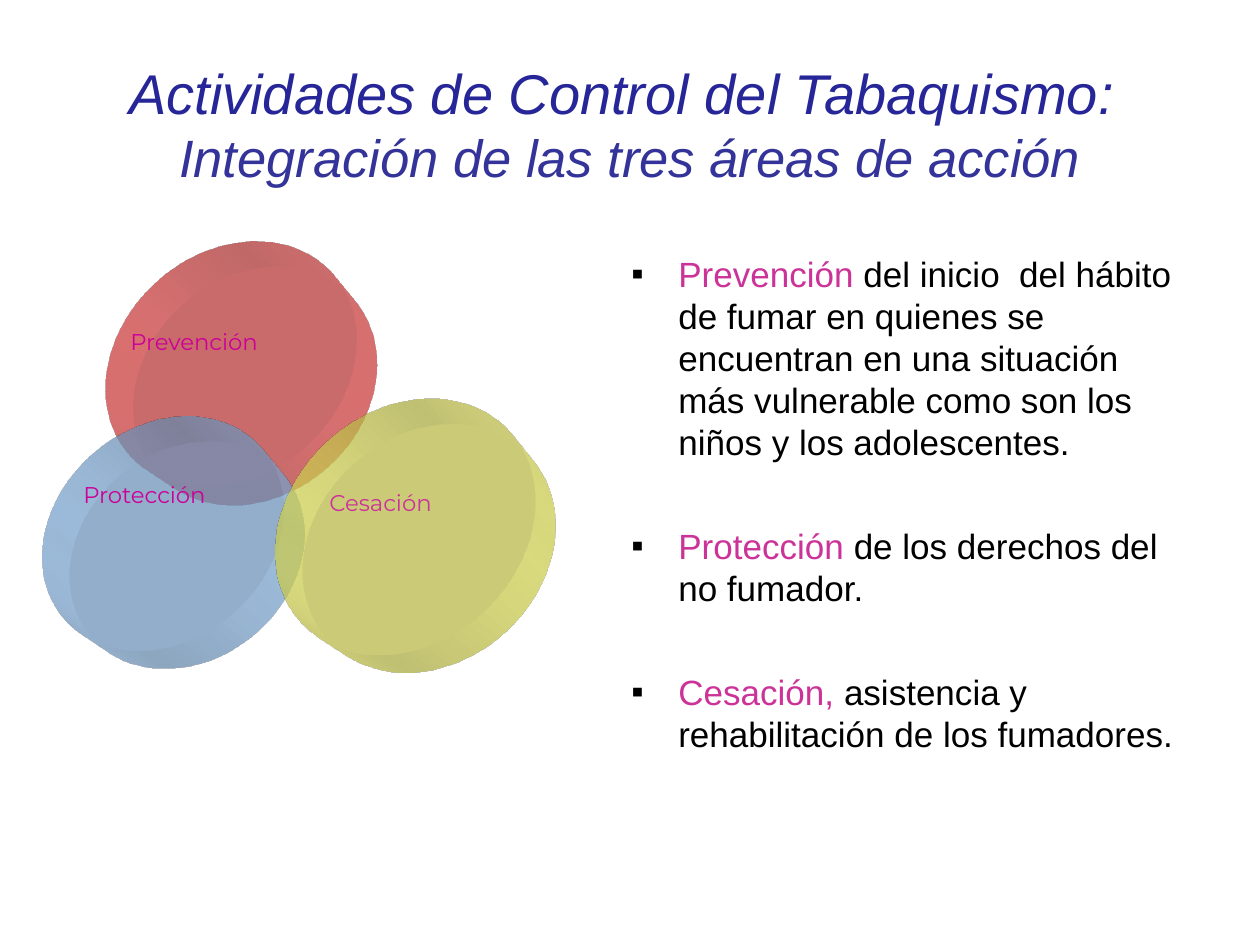
from lxml import etree
from pptx import Presentation
from pptx.dml.color import RGBColor
from pptx.enum.shapes import MSO_SHAPE
from pptx.enum.text import MSO_ANCHOR, PP_ALIGN
from pptx.oxml.ns import qn
from pptx.util import Pt

OVAL = MSO_SHAPE.OVAL
CENTER, LEFT = PP_ALIGN.CENTER, PP_ALIGN.LEFT
TOP, MIDDLE = MSO_ANCHOR.TOP, MSO_ANCHOR.MIDDLE
PX = 9144000 // 1260
DEPTH = 430200

COLORS = {
    "title": "262699", "subtitle": "333399", "text": "000000",
    "accent": "CC3399", "label": "CC0099",
    "red": "FF5050", "blue": "99CCFF", "yellow": "FFFF66",
}

deck = Presentation()
deck.slide_width, deck.slide_height = 1260 * PX, 945 * PX
page = deck.slides.add_slide(deck.slide_layouts[6])


def add_text(shapes, bounds, paragraphs, align=LEFT, anchor=TOP):
    """Add a wrapping text box; each paragraph lists (text, size, font, color, italic)."""
    box = shapes.add_textbox(*(value * PX for value in bounds))
    frame = box.text_frame
    frame.word_wrap, frame.vertical_anchor = True, anchor
    for index, spans in enumerate(paragraphs):
        para = frame.add_paragraph() if index else frame.paragraphs[0]
        para.alignment = align
        for text, size, font, color, italic in spans:
            span = para.add_run()
            span.text = text
            formats = {"size": Pt(size), "name": font, "italic": italic}
            for name, value in formats.items():
                setattr(span.font, name, value)
            span.font.color.rgb = RGBColor.from_string(COLORS[color])
    return frame


def extrude(shape, color):
    """Turn a flat shape into a tilted solid seen in perspective."""
    properties = shape._element.spPr
    scene = etree.SubElement(properties, qn("a:scene3d"))
    camera = etree.SubElement(scene, qn("a:camera"), prst="legacyPerspectiveFront")
    etree.SubElement(camera, qn("a:rot"), lat="20099999", lon="1500000", rev="0")
    etree.SubElement(scene, qn("a:lightRig"), rig="legacyFlat3", dir="b")
    solid = etree.SubElement(properties, qn("a:sp3d"), extrusionH=str(DEPTH),
                             prstMaterial="legacyMatte")
    for bevel in ("a:bevelT", "a:bevelB"):
        etree.SubElement(solid, qn(bevel), w="13500", h="13500", prst="angle")
    side = etree.SubElement(solid, qn("a:extrusionClr"))
    etree.SubElement(side, qn("a:srgbClr"), val=color)


add_text(page.shapes, (0, 52, 1260, 145), [[
    ("Actividades de Control del Tabaquismo:  ", 32, "Arial", "title", True),
    ("Integración de las tres áreas de acción", 30, "Arial", "subtitle", True),
]], CENTER)

cylinders = [
    ("red", (88, 227, 276, 266), "Prevención", (118, 321, 230, 40), "label"),
    ("blue", (25, 403, 266, 253), "Protección", (71, 474, 170, 40), "label"),
    ("yellow", (256, 384, 286, 276), "Cesación", (317, 482, 173, 40), "accent"),
]
for color, bounds, label, label_bounds, label_color in cylinders:
    group = page.shapes.add_group_shape()
    cylinder = group.shapes.add_shape(OVAL, *(value * PX for value in bounds))
    cylinder.shadow.inherit = False
    cylinder.line.fill.background()
    cylinder.fill.solid()
    cylinder.fill.fore_color.rgb = RGBColor.from_string(COLORS[color])
    tint = cylinder._element.spPr.find(".//" + qn("a:srgbClr"))
    etree.SubElement(tint, qn("a:alpha"), val="50000")
    extrude(cylinder, COLORS[color])
    add_text(group.shapes, label_bounds,
             [[(label, 13, "Montserrat", label_color, False)]], anchor=MIDDLE)

areas = [
    ("Prevención ", "del inicio  del hábito de fumar en quienes se encuentran en una "
     "situación más vulnerable como son los niños y los adolescentes."),
    ("Protección ", "de los derechos del no fumador."),
    ("Cesación, ", "asistencia y rehabilitación de los fumadores."),
]
body = add_text(page.shapes, (619, 246, 581, 581), [
    [(name, 20, "Arial", "accent", False), (detail, 20, "Arial", "text", False)]
    for name, detail in areas
])
for index, para in enumerate(body.paragraphs):
    properties = para._p.get_or_add_pPr()
    properties.set("marL", str(47 * PX))
    properties.set("indent", str(-47 * PX))
    bullet_color = etree.SubElement(properties, qn("a:buClr"))
    etree.SubElement(bullet_color, qn("a:srgbClr"), val=COLORS["text"])
    etree.SubElement(properties, qn("a:buFont"), typeface="Arial")
    etree.SubElement(properties, qn("a:buChar"), char="▪")
    para.line_spacing = Pt(24)
    if index:
        para.space_before = Pt(35.5)

deck.save("out.pptx")
